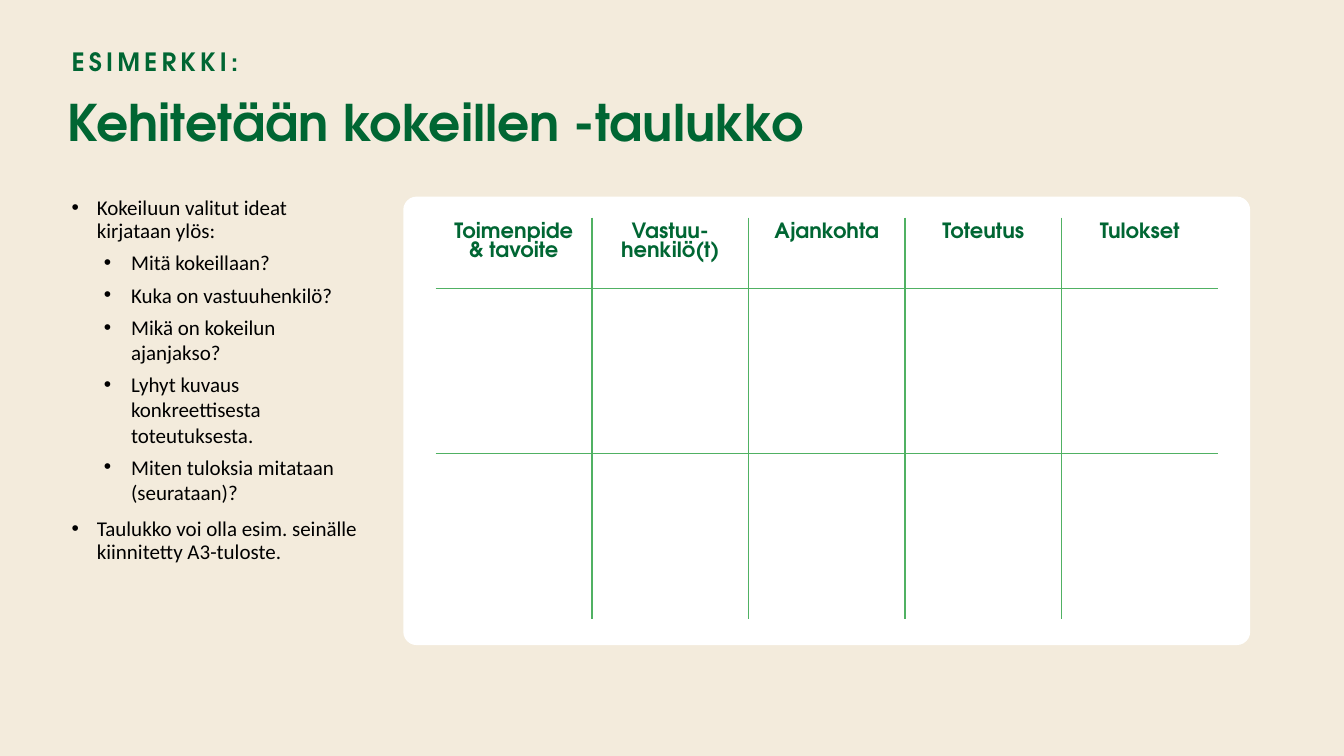
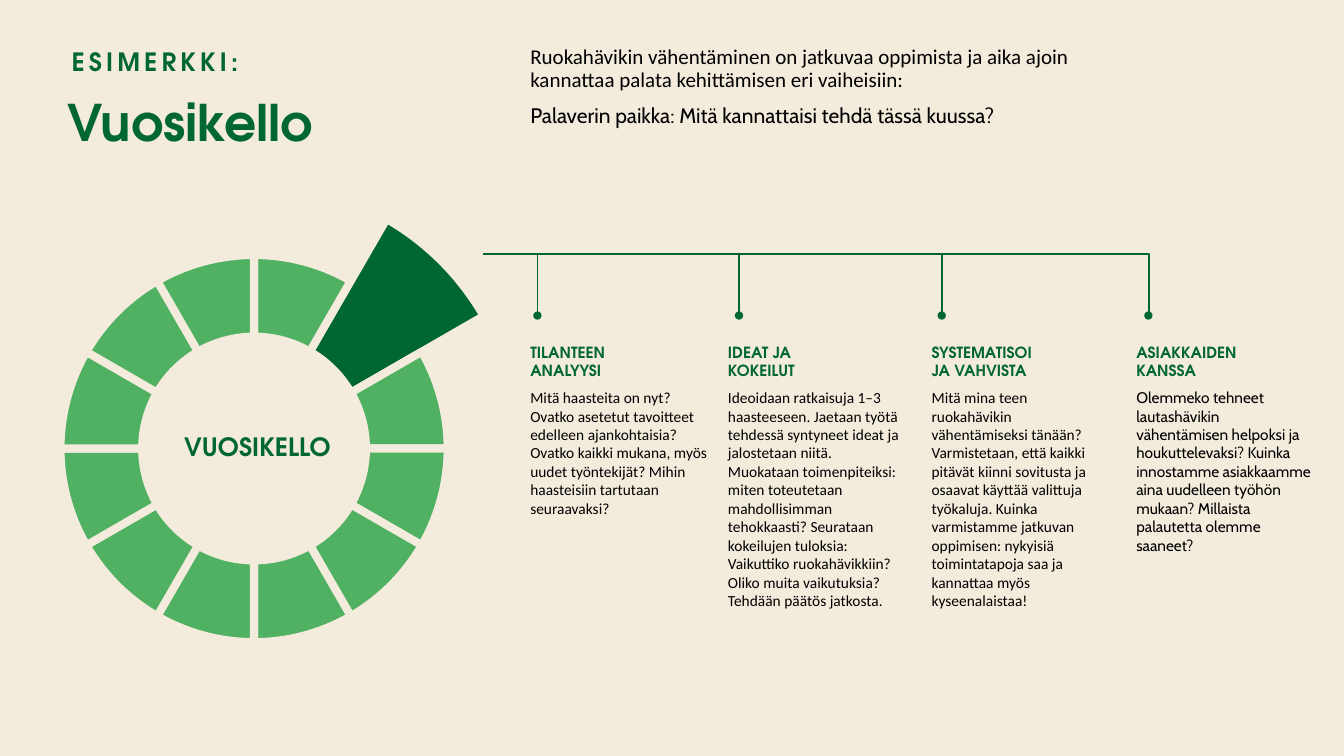
from dataclasses import dataclass
from math import cos, radians, sin, tan

from lxml.etree import SubElement
from pptx import Presentation
from pptx.dml.color import RGBColor
from pptx.enum.shapes import MSO_CONNECTOR, MSO_SHAPE
from pptx.enum.text import MSO_ANCHOR, MSO_AUTO_SIZE, PP_ALIGN
from pptx.oxml.ns import qn
from pptx.util import Inches, Pt


@dataclass(frozen=True)
class Theme:
    cream: RGBColor = RGBColor(0xF3, 0xEB, 0xDC)
    white: RGBColor = RGBColor(0xFF, 0xFF, 0xFF)
    black: RGBColor = RGBColor(0, 0, 0)
    forest: RGBColor = RGBColor(0x00, 0x66, 0x33)
    leaf: RGBColor = RGBColor(0x50, 0xB1, 0x63)
    display: str = "TeX Gyre Adventor"
    body: str = "Calibri"
    accent: str = "Cabin"
    title_size: int = 36
    label_size: int = 18
    text_size: int = 15
    note_size: int = 11


THEME = Theme()


class Deck:
    """Holds the shared style and the slide being filled."""

    def __init__(self, theme):
        self.theme = theme
        self.prs = Presentation()
        self.prs.slide_width = Inches(13.33)
        self.prs.slide_height = Inches(7.5)
        background = self.prs.slide_master.background.fill
        background.solid()
        background.fore_color.rgb = theme.cream
        self.slide = None

    def new_slide(self, title, title_width):
        """Title-only slide with the eyebrow line above the title."""
        self.slide = self.prs.slides.add_slide(self.prs.slide_layouts[5])
        heading = self.slide.shapes.title
        heading.left, heading.top = Inches(0.67), Inches(0.9)
        heading.width, heading.height = Inches(title_width), Inches(0.83)
        frame = heading.text_frame
        self.prepare(frame)
        frame.text = title
        frame.paragraphs[0].alignment = PP_ALIGN.LEFT
        self.style_display(frame.paragraphs[0], self.theme.title_size)
        eyebrow = self.text_frame(0.71, 0.46, 8.19, 0.3)
        eyebrow.text = "ESIMERKKI:"
        self.style_display(eyebrow.paragraphs[0], self.theme.label_size)
        eyebrow.paragraphs[0].runs[0].font._element.set("spc", "300")

    # Text helpers
    def prepare(self, frame):
        frame.word_wrap = True
        frame.auto_size = MSO_AUTO_SIZE.NONE
        frame.vertical_anchor = MSO_ANCHOR.TOP
        frame.margin_left = frame.margin_right = 0
        frame.margin_top = frame.margin_bottom = 0

    def text_frame(self, left, top, width, height):
        box = self.slide.shapes.add_textbox(
            Inches(left), Inches(top), Inches(width), Inches(height))
        self.prepare(box.text_frame)
        return box.text_frame

    def style(self, paragraph, font, size, color, bold=False):
        for run in paragraph.runs:
            run.font.name = font
            run.font.size = Pt(size)
            run.font.bold = bold
            run.font.color.rgb = color

    def style_display(self, paragraph, size):
        self.style(paragraph, self.theme.display, size, self.theme.forest, True)

    def add_paragraph(self, frame, text, space_before):
        """Fill the empty first paragraph, or append one with space above it."""
        paragraph = frame.paragraphs[0]
        if paragraph.runs:
            paragraph = frame.add_paragraph()
            paragraph.space_before = Pt(space_before)
        paragraph.text = text
        return paragraph

    # Elements
    def bullets(self, left, top, width, height, items):
        frame = self.text_frame(left, top, width, height)
        for level, text in items:
            paragraph = self.add_paragraph(frame, text, 5 if level else 10)
            if not level:
                paragraph.line_spacing = 0.9
            paragraph.level = level
            indent, hanging = (0.59, 0.27) if level else (0.25, 0.25)
            props = paragraph._p.get_or_add_pPr()
            props.set("marL", str(Inches(indent)))
            props.set("indent", str(-Inches(hanging)))
            SubElement(props, qn("a:buFont")).set("typeface", "Arial")
            SubElement(props, qn("a:buChar")).set("char", "•")
            self.style(paragraph, self.theme.body, self.theme.text_size,
                       self.theme.black)

    def intro(self, left, top, width, height, lines):
        frame = self.text_frame(left, top, width, height)
        for font, text in lines:
            paragraph = self.add_paragraph(frame, text, 10)
            paragraph.line_spacing = 0.9
            self.style(paragraph, font, self.theme.text_size, self.theme.black)

    def note(self, left, height, heading, text, font):
        frame = self.text_frame(left, 3.4, 1.76, height)
        self.style_display(self.add_paragraph(frame, heading, 0),
                           self.theme.note_size)
        self.style(self.add_paragraph(frame, text, 6), font,
                   self.theme.note_size, self.theme.black)

    def center_label(self, left, top, width, height, text):
        frame = self.text_frame(left, top, width, height)
        frame.margin_top = Inches(0.05)
        frame.text = text
        frame.paragraphs[0].alignment = PP_ALIGN.CENTER
        self.style_display(frame.paragraphs[0], self.theme.label_size)

    def card(self, left, top, width, height):
        panel = self.slide.shapes.add_shape(
            MSO_SHAPE.ROUNDED_RECTANGLE,
            Inches(left), Inches(top), Inches(width), Inches(height))
        panel.adjustments[0] = 0.03
        panel.shadow.inherit = False
        panel.fill.solid()
        panel.fill.fore_color.rgb = self.theme.white
        panel.line.fill.background()

    def border(self, cell, side, visible):
        line = SubElement(cell._tc.get_or_add_tcPr(), qn(f"a:ln{side}"))
        line.set("w", str(Pt(1)))
        if visible:
            fill = SubElement(line, qn("a:solidFill"))
            SubElement(fill, qn("a:srgbClr")).set("val", str(self.theme.leaf))
        else:
            SubElement(line, qn("a:noFill"))

    def grid(self, left, top, width, row_heights, headers):
        """Open table: green rules between the cells, none around them."""
        rows, columns = len(row_heights), len(headers)
        table = self.slide.shapes.add_table(
            rows, columns, Inches(left), Inches(top),
            Inches(width), Inches(sum(row_heights))).table
        table.first_row = table.horz_banding = False
        for column in table.columns:
            column.width = Inches(width / columns)
        for r, height in enumerate(row_heights):
            table.rows[r].height = Inches(height)
            for c in range(columns):
                cell = table.cell(r, c)
                self.border(cell, "L", c > 0)
                self.border(cell, "R", c < columns - 1)
                self.border(cell, "T", r > 0)
                self.border(cell, "B", r < rows - 1)
                cell.fill.background()
        for c, header in enumerate(headers):
            frame = table.cell(0, c).text_frame
            frame.text = header
            frame.paragraphs[0].alignment = PP_ALIGN.CENTER
            self.style_display(frame.paragraphs[0], self.theme.text_size)

    def wheel(self, center_x, center_y, inner, outer, raised, current):
        """Ring of twelve months with the current one reaching further out."""
        months = self.slide.shapes.add_group_shape().shapes
        step = 30

        def arc(radius, start, end):
            """Start, two Bezier handles and end of a circular arc."""
            handle = radius * 4 / 3 * tan(radians(end - start) / 4)
            places = [(start, 0), (start, handle), (end, -handle), (end, 0)]
            return [(Inches(center_x + radius * sin(radians(a)) + h * cos(radians(a))),
                     Inches(center_y - radius * cos(radians(a)) + h * sin(radians(a))))
                    for a, h in places]

        for month in range(12):
            start, end = month * step, (month + 1) * step
            reach = raised if month == current else outer
            points = arc(reach, start, end) + arc(inner, end, start)
            builder = months.build_freeform(*points[0], scale=1.0)
            builder.add_line_segments(points[1:], close=True)
            segment = builder.convert_to_shape()
            self.bend(segment)
            segment.shadow.inherit = False
            segment.fill.solid()
            segment.fill.fore_color.rgb = (
                self.theme.forest if month == current else self.theme.leaf)
            segment.line.color.rgb = self.theme.cream
            segment.line.width = Pt(5.75)

    def bend(self, segment):
        """Join the three lines after each arc start into one curve."""
        lines = list(segment._element.iter(qn("a:lnTo")))
        for arc_lines in (lines[:3], lines[4:7]):
            curve = SubElement(arc_lines[0].getparent(), qn("a:cubicBezTo"))
            arc_lines[0].addprevious(curve)
            for line in arc_lines:
                curve.append(line[0])
                line.getparent().remove(line)

    def dotted_line(self, kind, x1, y1, x2, y2):
        """Connector that ends in a dot; an elbow turns at its far end."""
        connector = self.slide.shapes.add_connector(
            kind, Inches(x1), Inches(y1), Inches(x2), Inches(y2))
        connector.line.color.rgb = self.theme.forest
        connector.line.width = Pt(1.25)
        SubElement(connector.line._get_or_add_ln(),
                   qn("a:tailEnd")).set("type", "oval")
        props = connector._element.spPr
        SubElement(props, qn("a:effectLst"))
        if kind == MSO_CONNECTOR.ELBOW:
            adjustments = props.find(qn("a:prstGeom")).get_or_add_avLst()
            turn = SubElement(adjustments, qn("a:gd"))
            turn.set("name", "adj1")
            turn.set("fmla", "val 100100")


def experiment_table(deck):
    deck.new_slide("Kehitetään kokeillen -taulukko", 10.37)
    # Instructions
    deck.bullets(0.71, 1.96, 2.85, 4.76, [
        (0, "Kokeiluun valitut ideat kirjataan ylös:"),
        (1, "Mitä kokeillaan?"),
        (1, "Kuka on vastuuhenkilö?"),
        (1, "Mikä on kokeilun ajanjakso?"),
        (1, "Lyhyt kuvaus konkreettisesta toteutuksesta."),
        (1, "Miten tuloksia mitataan (seurataan)?"),
        (0, "Taulukko voi olla esim. seinälle kiinnitetty A3-tuloste."),
    ])
    # Table to fill in
    deck.card(4, 1.95, 8.4, 4.45)
    deck.grid(4.32, 2.16, 7.76, [0.7, 1.64, 1.64], [
        "Toimenpide & tavoite", "Vastuu-henkilö(t)", "Ajankohta",
        "Toteutus", "Tulokset"])


def year_clock(deck):
    theme = deck.theme
    deck.new_slide("Vuosikello", 2.53)
    deck.intro(5.26, 0.46, 6.13, 1.41, [
        (theme.body, "Ruokahävikin vähentäminen on jatkuvaa oppimista ja aika "
                     "ajoin kannattaa palata kehittämisen eri vaiheisiin:"),
        (theme.accent, "Palaverin paikka: Mitä kannattaisi tehdä tässä kuussa?"),
    ])
    # Year wheel
    deck.wheel(2.52, 4.45, inner=1.11, outer=1.92, raised=2.63, current=1)
    deck.center_label(1.22, 4.23, 2.67, 0.4, "VUOSIKELLO")
    # Phases: text left, text height, stem position, heading, text, font
    phases = [
        (5.26, 1.75, 5.33, "TILANTEEN \nANALYYSI",
         "Mitä haasteita on nyt? Ovatko asetetut tavoitteet edelleen "
         "ajankohtaisia? Ovatko kaikki mukana, myös uudet työntekijät? Mihin "
         "haasteisiin tartutaan seuraavaksi?", theme.body),
        (7.22, 2.68, 7.33, "IDEAT JA \nKOKEILUT",
         "Ideoidaan ratkaisuja 1–3 haasteeseen. Jaetaan työtä tehdessä "
         "syntyneet ideat ja jalostetaan niitä. Muokataan toimenpiteiksi: "
         "miten toteutetaan mahdollisimman tehokkaasti? Seurataan kokeilujen "
         "tuloksia: Vaikuttiko ruokahävikkiin? Oliko muita vaikutuksia? "
         "Tehdään päätös jatkosta.", theme.body),
        (9.24, 2.68, 9.34, "SYSTEMATISOI \nJA VAHVISTA",
         "Mitä mina teen ruokahävikin vähentämiseksi tänään? Varmistetaan, "
         "että kaikki pitävät kiinni sovitusta ja osaavat käyttää valittuja "
         "työkaluja. Kuinka varmistamme jatkuvan oppimisen: nykyisiä "
         "toimintatapoja saa ja kannattaa myös kyseenalaistaa!", theme.body),
        (11.27, 2.31, 11.39, "ASIAKKAIDEN \nKANSSA",
         "Olemmeko tehneet lautashävikin vähentämisen helpoksi ja "
         "houkuttelevaksi? Kuinka innostamme asiakkaamme aina uudelleen "
         "työhön mukaan? Millaista palautetta olemme saaneet?", theme.accent),
    ]
    rail, dots = 2.52, 3.13
    for left, height, stem, heading, text, font in phases:
        deck.note(left, height, heading, text, font)
        if stem == phases[-1][2]:
            deck.dotted_line(MSO_CONNECTOR.ELBOW, 4.79, rail, stem, dots)
        else:
            deck.dotted_line(MSO_CONNECTOR.STRAIGHT, stem, rail, stem, dots)


def main():
    deck = Deck(THEME)
    experiment_table(deck)
    year_clock(deck)
    deck.prs.save("out.pptx")


if __name__ == "__main__":
    main()
